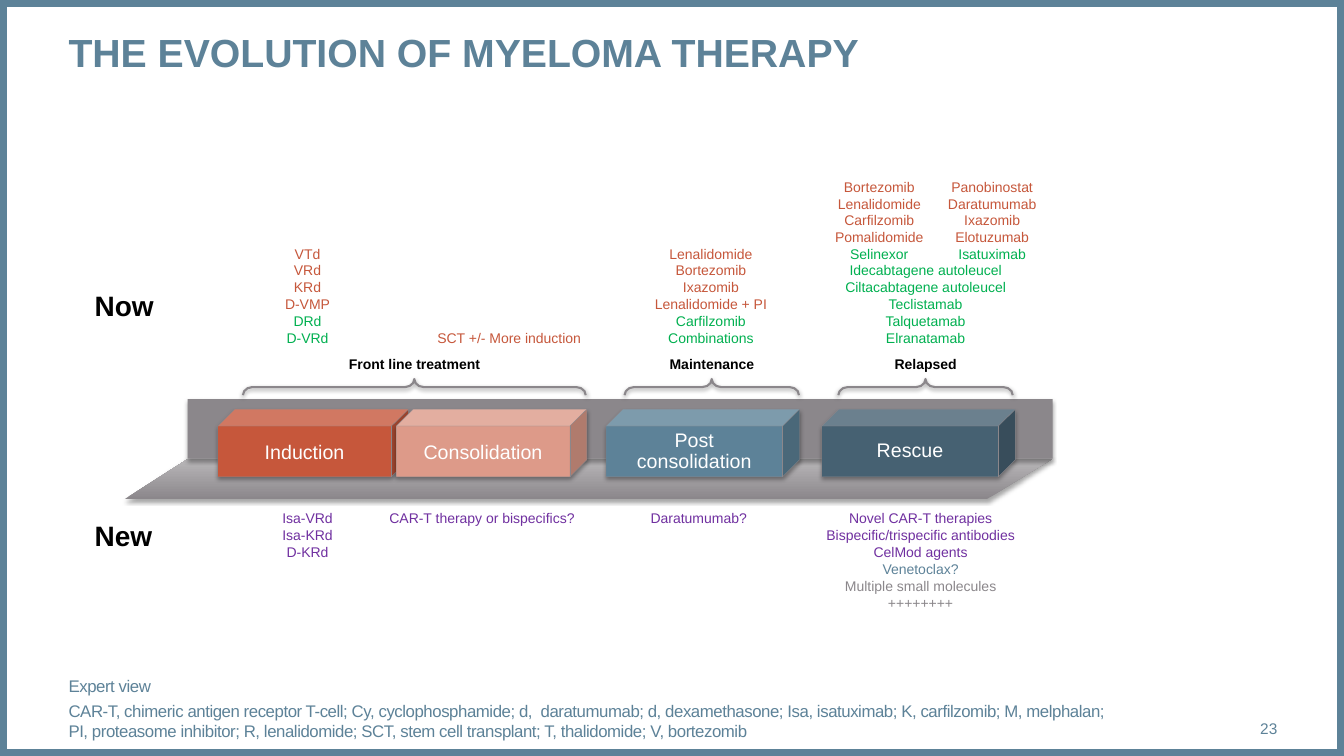
from lxml.etree import SubElement
from pptx import Presentation
from pptx.dml.color import RGBColor
from pptx.enum.shapes import MSO_SHAPE as Shape
from pptx.enum.text import MSO_ANCHOR as Anchor, MSO_AUTO_SIZE as AutoSize, PP_ALIGN as Align
from pptx.oxml.ns import qn
from pptx.util import Inches, Pt

BLUE, GREY, RUST, GREEN, PURPLE = "5D8298", "8B878B", "C6573B", "00B050", "7030A0"
BLACK, WHITE = "000000", "FFFFFF"
LINE_HEIGHT, PADDING = 0.168, 0.1

NOW_COLUMNS = [
    (3.05, 0.65, 3.49, [(RUST, ["VTd", "VRd", "KRd", "D-VMP"]), (GREEN, ["DRd", "D-VRd"])]),
    (5.05, 1.64, 3.49, [(RUST, ["SCT +/- More induction"])]),
    (7.05, 1.32, 3.49, [(RUST, ["Lenalidomide\vBortezomib\vIxazomib\vLenalidomide + PI"]),
                        (GREEN, ["Carfilzomib", "Combinations"])]),
    (9.18, 1.8, 3.49, [(GREEN, ["Idecabtagene autoleucel", "Ciltacabtagene autoleucel",
                                "Teclistamab", "Talquetamab", "Elranatamab"])]),
    (8.72, 1.09, 2.66, [(RUST, ["Bortezomib", "Lenalidomide\vCarfilzomib\vPomalidomide"]),
                        (GREEN, ["Selinexor"])]),
    (9.84, 1.09, 2.66, [(RUST, ["Panobinostat", "Daratumumab", "Ixazomib", "Elotuzumab"]),
                        (GREEN, ["Isatuximab"])]),
]
NEW_COLUMNS = [
    (3.05, 0.71, [(PURPLE, ["Isa-VRd", "Isa-KRd", "D-KRd"])]),
    (4.78, 2.06, [(PURPLE, ["CAR-T therapy or bispecifics?"])]),
    (6.93, 1.16, [(PURPLE, ["Daratumumab?"])]),
    (9.13, 2.09, [(PURPLE, ["Novel CAR-T therapies\vBispecific/trispecific antibodies\vCelMod agents"]),
                  (BLUE, ["Venetoclax?"]),
                  (GREY, ["Multiple small molecules\v++++++++"])]),
]
PHASES = [
    ("Front line treatment", 4.11, 3.4, 1.52),
    ("Maintenance", 7.06, 1.73, 1.05),
    ("Relapsed", 9.18, 1.73, 0.82),
]
STAGES = [
    ("Induction", 2.16, 1.89, RUST, 1.0),
    ("Consolidation", 3.93, 1.89, "DD9A89", 1.0),
    ("Post consolidation", 6.01, 1.92, BLUE, 0.9),
    ("Rescue", 8.15, 1.92, "466172", 0.9),
]
FOOTNOTES = [
    "Expert view",
    "CAR-T, chimeric antigen receptor T-cell; Cy, cyclophosphamide; d,  daratumumab; "
    "d, dexamethasone; Isa, isatuximab; K, carfilzomib; M, melphalan;\v"
    "PI, proteasome inhibitor; R, lenalidomide; SCT, stem cell transplant; "
    "T, thalidomide; V, bortezomib",
]


def colour(code):
    return RGBColor.from_string(code)


def line_count(groups):
    return sum(text.count("\v") + 1 for _, texts in groups for text in texts)


class Page:
    font = "Arial"

    def __init__(self, deck):
        self.slide = deck.slides.add_slide(deck.slide_layouts[1])
        self.shapes = self.slide.shapes

    def place(self, shape, left, top, width, height):
        shape.left, shape.top = Inches(left), Inches(top)
        shape.width, shape.height = Inches(width), Inches(height)

    def style(self, paragraph, size, code, bold=False, align=Align.LEFT):
        paragraph.alignment = align
        font = paragraph.font
        font.name, font.size, font.bold = self.font, Pt(size), bold
        font.color.rgb = colour(code)

    def clear_insets(self, frame):
        frame.margin_left = frame.margin_right = frame.margin_top = frame.margin_bottom = 0
        frame.word_wrap = True
        frame.auto_size = AutoSize.NONE

    def shadow(self, shape, opacity=35, distance=1.8):
        shape.shadow.inherit = False
        effects = shape._element.spPr.find(qn("a:effectLst"))
        outer = SubElement(effects, qn("a:outerShdw"), blurRad=str(Pt(3.1)),
                           dist=str(Pt(distance)), dir="5400000", rotWithShape="0")
        tone = SubElement(outer, qn("a:srgbClr"), val=BLACK)
        SubElement(tone, qn("a:alpha"), val=str(opacity * 1000))

    def title(self, text):
        box = self.shapes.title
        self.place(box, 0.68, 0.28, 11.99, 0.94)
        frame = box.text_frame
        self.clear_insets(frame)
        frame.vertical_anchor = Anchor.TOP
        frame.text = text
        self.style(frame.paragraphs[0], 28, BLUE, True)

    def footnotes(self, texts):
        box = self.slide.placeholders[1]
        self.place(box, 0.68, 6.95, 11.13, 0.4)
        frame = box.text_frame
        self.clear_insets(frame)
        frame.vertical_anchor = Anchor.BOTTOM
        for index, text in enumerate(texts):
            paragraph = frame.paragraphs[0] if index == 0 else frame.add_paragraph()
            paragraph.text = text
            properties = paragraph._p.get_or_add_pPr()
            properties.set("marL", "0")
            properties.set("indent", "0")
            SubElement(properties, qn("a:buNone"))
            paragraph.space_before = Pt(3 if index else 0)
            self.style(paragraph, 12, BLUE)
            for span in paragraph.runs:
                span._r.get_or_add_rPr().set("spc", "-30")

    def page_number(self, text):
        box = self.shapes.add_textbox(Inches(11.81), Inches(7.03), Inches(0.86), Inches(0.4))
        self.clear_insets(box.text_frame)
        box.text_frame.vertical_anchor = Anchor.MIDDLE
        box.text_frame.text = text
        self.style(box.text_frame.paragraphs[0], 11, BLUE, align=Align.RIGHT)

    def label(self, groups, left, top, width, height, size=10, bold=False, align=Align.CENTER):
        box = self.shapes.add_textbox(Inches(left), Inches(top), Inches(width), Inches(height))
        frame = box.text_frame
        frame.word_wrap = False
        frame.auto_size = AutoSize.SHAPE_TO_FIT_TEXT
        lines = [(code, text) for code, texts in groups for text in texts]
        for index, (code, text) in enumerate(lines):
            paragraph = frame.paragraphs[0] if index == 0 else frame.add_paragraph()
            paragraph.text = text
            self.style(paragraph, size, code, bold, align)

    def column(self, groups, centre, width, top=None, bottom=None):
        height = PADDING + LINE_HEIGHT * line_count(groups)
        start = bottom - height if top is None else top
        self.label(groups, centre - width / 2, start, width, height)

    def block(self, kind, left, top, width, height, fill=None, line=None, weight=0.25):
        shape = self.shapes.add_shape(kind, Inches(left), Inches(top), Inches(width), Inches(height))
        shape.shadow.inherit = False
        if fill:
            shape.fill.solid()
            shape.fill.fore_color.rgb = colour(fill)
        else:
            shape.fill.background()
        if line:
            shape.line.color.rgb = colour(line)
            shape.line.width = Pt(weight)
        else:
            shape.line.fill.background()
        return shape

    def stage(self, text, left, width, fill, spacing):
        cube = self.block(Shape.CUBE, left, 4.06, width, 0.67, fill, GREY)
        self.shadow(cube)
        frame = cube.text_frame
        frame.word_wrap = True
        frame.vertical_anchor = Anchor.MIDDLE
        frame.text = text
        frame.paragraphs[0].line_spacing = spacing
        self.style(frame.paragraphs[0], 14, WHITE, align=Align.CENTER)

    def phase(self, text, centre, length, width):
        thickness, middle = 0.16, 3.84
        brace = self.block(Shape.RIGHT_BRACE, centre - thickness / 2, middle - length / 2,
                           thickness, length, line=GREY, weight=1.5)
        brace.rotation = 270
        brace.adjustments[0], brace.adjustments[1] = 0.582, 0.5
        self.shadow(brace, 38, 1.6)
        self.label([(BLACK, [text])], centre - width / 2, 3.48, width, 0.27, bold=True)

    def floor(self, corners):
        points = [(Inches(x), Inches(y)) for x, y in corners]
        builder = self.shapes.build_freeform(*points[0])
        builder.add_line_segments(points[1:], close=True)
        shape = builder.convert_to_shape()
        shape.line.fill.background()
        shape.fill.gradient()
        shape.fill.gradient_angle = 90
        for stop, position, code in zip(shape.fill.gradient_stops, (0, 0.99), (GREY, "B9B7B9")):
            stop.position = position
            stop.color.rgb = colour(code)
        self.shadow(shape)


def main():
    deck = Presentation()
    deck.slide_width, deck.slide_height = Inches(13.33), Inches(7.5)
    page = Page(deck)
    page.block(Shape.RECTANGLE, 0, 0, 13.33, 7.5, line=BLUE, weight=10)
    page.title("THE EVOLUTION OF MYELOMA THERAPY")
    page.footnotes(FOOTNOTES)
    page.page_number("23")
    page.floor([(1.24, 4.95), (1.87, 4.55), (10.44, 4.55), (9.79, 4.95)])
    page.shadow(page.block(Shape.RECTANGLE, 1.86, 3.96, 8.58, 0.59, GREY))
    for stage in STAGES:
        page.stage(*stage)
    for phase in PHASES:
        page.phase(*phase)
    for text, top in (("Now", 2.81), ("New", 5.09)):
        page.label([(BLACK, [text])], 0.84, top, 0.79, 0.44, 20, True, Align.LEFT)
    for centre, width, bottom, groups in NOW_COLUMNS:
        page.column(groups, centre, width, bottom=bottom)
    for centre, width, groups in NEW_COLUMNS:
        page.column(groups, centre, width, top=5.01)
    deck.save("out.pptx")


if __name__ == "__main__":
    main()
